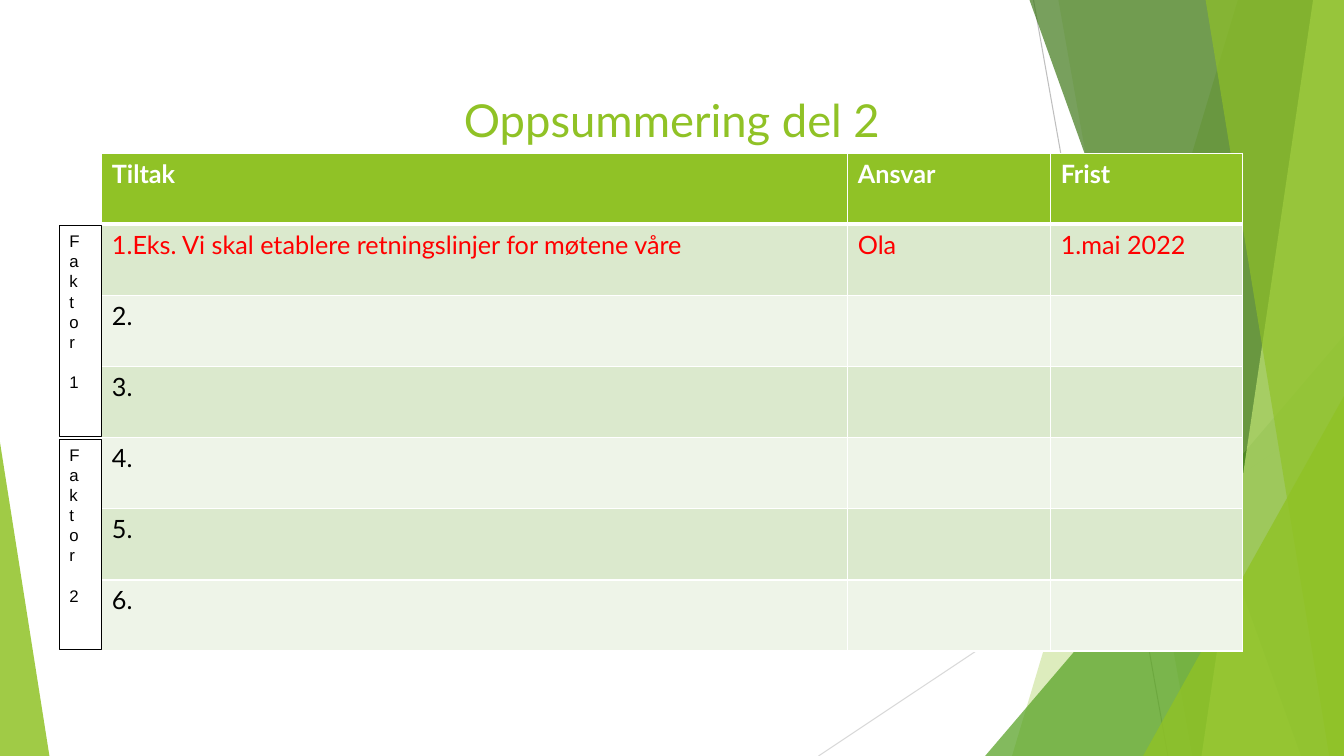
from lxml import etree
from pptx import Presentation, util as u
from pptx.dml.color import RGBColor
from pptx.enum import shapes as s, text as t
from pptx.oxml.ns import qn

# The slide is a grid of 100 columns by 100 rows.
WIDE, HIGH = u.Inches(13.33), u.Inches(7.5)
LIME = RGBColor(0x90, 0xC2, 0x26)
LEAF = RGBColor(0x54, 0xA0, 0x21)
MOSS = RGBColor(0x3F, 0x78, 0x19)
PALE = RGBColor(0xC0, 0xE4, 0x74)
BAND = RGBColor(0xDB, 0xE9, 0xCD)
MIST = RGBColor(0xEE, 0xF4, 0xE8)
ASH = RGBColor(0xBF, 0xBF, 0xBF)
FOG = RGBColor(0xD9, 0xD9, 0xD9)
RED = RGBColor(0xFF, 0, 0)
BLACK = RGBColor(0, 0, 0)
WHITE = RGBColor(0xFF, 0xFF, 0xFF)

LEFT, TOP, STEP = 7.58, 20.27, 9.41
COLS = (55.5, 15.1, 14.3)
PLAN = [
    ("Tiltak", "Ansvar", "Frist"),
    ("1.Eks. Vi skal etablere retningslinjer for møtene våre", "Ola", "1.mai 2022"),
] + [(f"{num}.", "", "") for num in range(2, 7)]


def across(cols):
    return round(WIDE * cols / 100)


def down(rows):
    return round(HIGH * rows / 100)


def place(left, top, cols, rows):
    return across(left), down(top), across(cols), down(rows)


def style(para, size, color, font="Lato", bold=False):
    for run in para.runs:
        run.font.name, run.font.size = font, u.Pt(size)
        run.font.color.rgb, run.font.bold = color, bold


def tint(shape, color, alpha):
    """Fill a shape with a see-through colour; alpha is in percent."""
    shape.shadow.inherit = False
    shape.line.fill.background()
    shape.fill.solid()
    shape.fill.fore_color.rgb = color
    tone = shape.fill._xPr.find(".//" + qn("a:srgbClr"))
    etree.SubElement(tone, qn("a:alpha"), val=str(alpha * 1000))


def add_line(slide, start, end, color):
    line = slide.shapes.add_connector(
        s.MSO_CONNECTOR.STRAIGHT, across(start[0]), down(start[1]),
        across(end[0]), down(end[1]))
    line.line.color.rgb, line.line.width = color, u.Pt(0.75)
    etree.SubElement(line._element.spPr, qn("a:effectLst"))


def add_facet(slide, high, low, color, alpha):
    """Draw a full-height facet whose left edge runs from high to low."""
    pen = slide.shapes.build_freeform(across(high), 0, scale=1.0)
    pen.add_line_segments(
        [(WIDE, 0), (WIDE, HIGH), (across(low), HIGH)], close=True)
    tint(pen.convert_to_shape(), color, alpha)


def add_wedge(slide, left, top, cols, apex, color, alpha):
    """Draw a triangle that stands on the lower edge of the slide."""
    wedge = slide.shapes.add_shape(
        s.MSO_SHAPE.ISOSCELES_TRIANGLE, *place(left, top, cols, 100 - top))
    wedge.adjustments[0] = apex
    tint(wedge, color, alpha)


def add_decor(slide):
    add_line(slide, (76.9, 0), (86.9, 100), ASH)
    add_line(slide, (100, 53.7), (60.9, 100), FOG)
    add_facet(slide, 92.1, 75.3, LIME, 30)
    add_facet(slide, 78.75, 88.7, LIME, 20)
    add_wedge(slide, 73.3, 44.4, 26.7, 1, LEAF, 72)
    add_facet(slide, 76.6, 96.8, MOSS, 70)
    add_facet(slide, 97.7, 89.4, PALE, 70)
    add_facet(slide, 89.7, 98.9, LIME, 65)
    add_wedge(slide, 85.05, 52.4, 14.95, 1, LIME, 80)
    add_wedge(slide, 0, 58.5, 3.68, 0, LIME, 85)


def add_title(slide, words):
    frame = slide.shapes.add_textbox(*place(4.1, 12.2, 91.8, 7.5)).text_frame
    frame.word_wrap = True
    frame.margin_top = frame.margin_bottom = 0
    frame.text = words
    frame.paragraphs[0].alignment = t.PP_ALIGN.CENTER
    style(frame.paragraphs[0], 32.4, LIME)


def edge(cell, base):
    """Give a cell white borders; base is the width of the lower one."""
    props = cell._tc.get_or_add_tcPr()
    for side, width in (("L", 1), ("R", 1), ("T", 1), ("B", base)):
        line = etree.SubElement(props, qn("a:ln" + side), w=str(u.Pt(width)))
        fill = etree.SubElement(line, qn("a:solidFill"))
        etree.SubElement(fill, qn("a:srgbClr"), val=str(WHITE))


def add_plan(slide):
    table = slide.shapes.add_table(
        len(PLAN), len(COLS),
        *place(LEFT, TOP, sum(COLS), STEP * len(PLAN))).table
    for col, width in zip(table.columns, COLS):
        col.width = across(width)
    for row, words in enumerate(PLAN):
        table.rows[row].height = down(STEP)
        back = LIME if row == 0 else BAND if row % 2 else MIST
        ink = (WHITE, RED)[row] if row < 2 else BLACK
        for col, word in enumerate(words):
            cell = table.cell(row, col)
            edge(cell, 3 if row == 0 else 1)
            cell.fill.solid()
            cell.fill.fore_color.rgb = back
            cell.text = word
            style(cell.text_frame.paragraphs[0], 18, ink, bold=row == 0)


def add_label(slide, words, row):
    """Stack letters beside three rows of the plan."""
    box = slide.shapes.add_textbox(
        *place(4.43, TOP + STEP * row + 0.2, 3.15, STEP * 3 - 0.4))
    box.line.color.rgb, box.line.width = BLACK, u.Pt(0.75)
    frame = box.text_frame
    frame.word_wrap = True
    frame._txBody.bodyPr.set("vert", "wordArtVert")
    frame.text = words
    style(frame.paragraphs[0], 12, BLACK, "Arial")


def main():
    deck = Presentation()
    deck.slide_width, deck.slide_height = WIDE, HIGH
    slide = deck.slides.add_slide(deck.slide_layouts[6])
    add_decor(slide)
    add_title(slide, "Oppsummering del 2")
    add_plan(slide)
    for num in (1, 2):
        add_label(slide, f"Faktor {num}", 3 * num - 2)
    deck.save("out.pptx")


if __name__ == "__main__":
    main()
